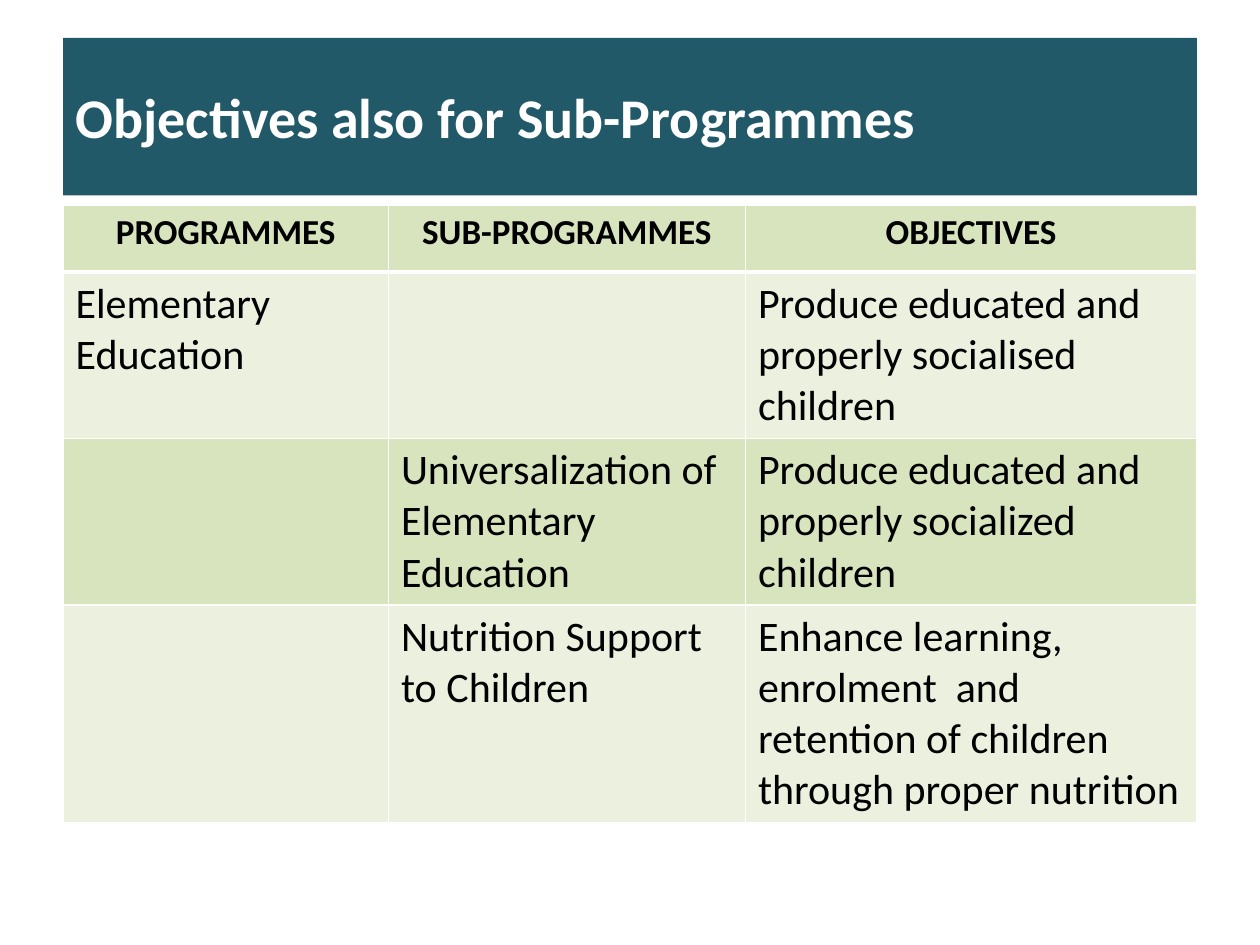
"""Build a slide with a table of programme and sub-programme objectives."""
from lxml.etree import SubElement as Sub
from pptx import Presentation
from pptx.dml.color import RGBColor as RGB
from pptx.enum.text import MSO_ANCHOR as Anchor, PP_ALIGN as Align
from pptx.oxml.ns import qn
from pptx.util import Pt

WHITE = RGB(0xFF, 0xFF, 0xFF)
BLACK = RGB(0, 0, 0)
TEAL = RGB(0x21, 0x59, 0x68)
GREEN = RGB(0xD7, 0xE4, 0xBD)
PALE = RGB(0xEB, 0xF1, 0xDE)

HEAD = {"name": "Calibri", "size": Pt(20), "bold": True}
BODY = {"name": "Calibri", "size": Pt(24), "bold": False}
TITLE = {"name": "Calibri", "size": Pt(32), "bold": True}
ROWS = [
    ("PROGRAMMES", "SUB-PROGRAMMES", "OBJECTIVES"),
    ("Elementary Education", "", "Produce educated and properly socialised children"),
    ("", "Universalization of Elementary Education",
     "Produce educated and properly socialized children"),
    ("", "Nutrition Support to Children",
     "Enhance learning, enrolment  and retention of children through proper nutrition"),
]
WIDTHS = [186, 204, 258]
HEIGHTS = [38.5, 95, 95, 124.5]


def write(frame, text, look, color, align):
    para = frame.paragraphs[0]
    para.alignment = align
    run = para.add_run()
    run.text = text
    for key, value in look.items():
        setattr(run.font, key, value)
    run.font.color.rgb = color


def edge(cell, side, width):
    line = Sub(cell._tc.get_or_add_tcPr(), qn(f"a:ln{side}"), w=str(Pt(width)))
    fill = Sub(line, qn("a:solidFill"))
    Sub(fill, qn("a:srgbClr"), val=str(WHITE))


prs = Presentation()
prs.slide_width, prs.slide_height = Pt(720), Pt(540)
slide = prs.slides.add_slide(prs.slide_layouts[5])

title = slide.shapes.title
box = {"left": Pt(36), "top": Pt(21.6), "width": Pt(648), "height": Pt(90)}
for key, value in box.items():
    setattr(title, key, value)
title.fill.solid()
title.fill.fore_color.rgb = TEAL
title.text_frame.vertical_anchor = Anchor.MIDDLE
write(title.text_frame, "Objectives also for Sub-Programmes", TITLE, WHITE, Align.LEFT)

table = slide.shapes.add_table(
    len(ROWS), len(WIDTHS), Pt(36), Pt(117), Pt(sum(WIDTHS)), Pt(sum(HEIGHTS))
).table
table.first_row = table.horz_banding = False
for col, width in zip(table.columns, WIDTHS):
    col.width = Pt(width)

for i, (row, texts) in enumerate(zip(table.rows, ROWS)):
    row.height = Pt(HEIGHTS[i])
    look, align = (BODY, Align.LEFT) if i else (HEAD, Align.CENTER)
    for cell, text in zip(row.cells, texts):
        for side in "LRTB":
            edge(cell, side, 3 if (i, side) in [(0, "B"), (1, "T")] else 1)
        cell.fill.solid()
        cell.fill.fore_color.rgb = PALE if i % 2 else GREEN
        if text:
            write(cell.text_frame, text, look, BLACK, align)

prs.save("out.pptx")
